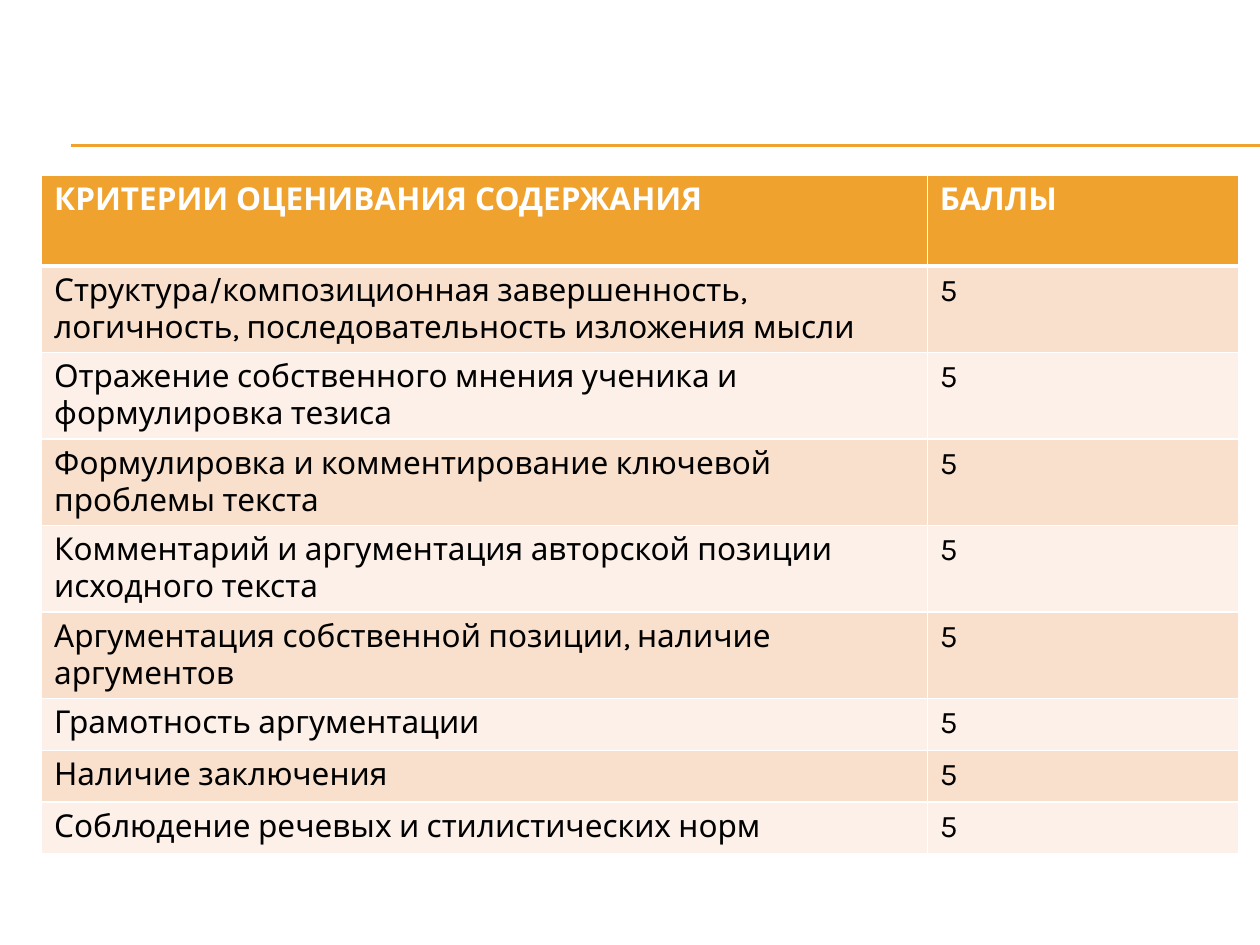
from lxml.etree import SubElement
from pptx import Presentation
from pptx.dml.color import RGBColor as RGB
from pptx.enum.shapes import MSO_CONNECTOR as CONN
from pptx.oxml.ns import qn
from pptx.util import Inches, Pt

FONT = "Karla"
COLORS = {"accent": "F0A22E", "band_dark": "F9E0CD", "band_light": "FCF0E8",
          "white": "FFFFFF", "text": "000000"}
HEADER = ("КРИТЕРИИ ОЦЕНИВАНИЯ СОДЕРЖАНИЯ", "БАЛЛЫ")
CRITERIA = [
    ("Структура/композиционная завершенность, логичность, "
     "последовательность изложения мысли", 5),
    ("Отражение собственного мнения ученика и формулировка тезиса", 5),
    ("Формулировка и комментирование ключевой проблемы текста", 5),
    ("Комментарий и аргументация авторской позиции исходного текста", 5),
    ("Аргументация собственной позиции, наличие аргументов", 5),
    ("Грамотность аргументации", 5),
    ("Наличие заключения", 5),
    ("Соблюдение речевых и стилистических норм", 5),
]
COLS = (7.03, 2.47)
HEADER_H, ROW_H = 0.72, 0.41
LEFT, TOP = 0.33, 1.39
RULE_LEFT, RULE_TOPS = 0.56, (1.15, 1.16)


def color(name):
    return RGB.from_string(COLORS[name])


def set_borders(cell, bottom):
    tc_pr = cell._tc.get_or_add_tcPr()
    for side, width in (("L", 1), ("R", 1), ("T", 1), ("B", bottom)):
        ln = SubElement(tc_pr, qn(f"a:ln{side}"), w=str(Pt(width)))
        fill = SubElement(ln, qn("a:solidFill"))
        SubElement(fill, qn("a:srgbClr"), val=COLORS["white"])


def fill_cell(cell, text, fill, ink, bold, bottom):
    set_borders(cell, bottom)
    cell.fill.solid()
    cell.fill.fore_color.rgb = color(fill)
    r = cell.text_frame.paragraphs[0].add_run()
    r.text = str(text)
    r.font.name, r.font.size, r.font.bold = FONT, Pt(18), bold
    r.font.color.rgb = color(ink)


prs = Presentation()
prs.slide_width, prs.slide_height = Inches(10), Inches(7.5)
slide = prs.slides.add_slide(prs.slide_layouts[6])

# Double rule running to the right edge
for y in RULE_TOPS:
    rule = slide.shapes.add_connector(CONN.STRAIGHT, Inches(RULE_LEFT), Inches(y),
                                      prs.slide_width, Inches(y))
    rule.line.color.rgb = color("accent")
    rule.line.width = Pt(0.75)
    SubElement(rule._element.spPr, qn("a:effectLst"))

# Criteria table; rows grow to fit wrapped text
rows = [HEADER] + CRITERIA
heights = [HEADER_H] + [ROW_H] * len(CRITERIA)
table = slide.shapes.add_table(len(rows), len(COLS), Inches(LEFT), Inches(TOP),
                               Inches(sum(COLS)), Inches(sum(heights))).table
for column, width in zip(table.columns, COLS):
    column.width = Inches(width)
for i, (values, height) in enumerate(zip(rows, heights)):
    table.rows[i].height = Inches(height)
    if i == 0:
        style = ("accent", "white", True, 3)
    else:
        style = ("band_dark" if i % 2 else "band_light", "text", False, 1)
    for j, value in enumerate(values):
        fill_cell(table.cell(i, j), value, *style)

prs.save("out.pptx")
